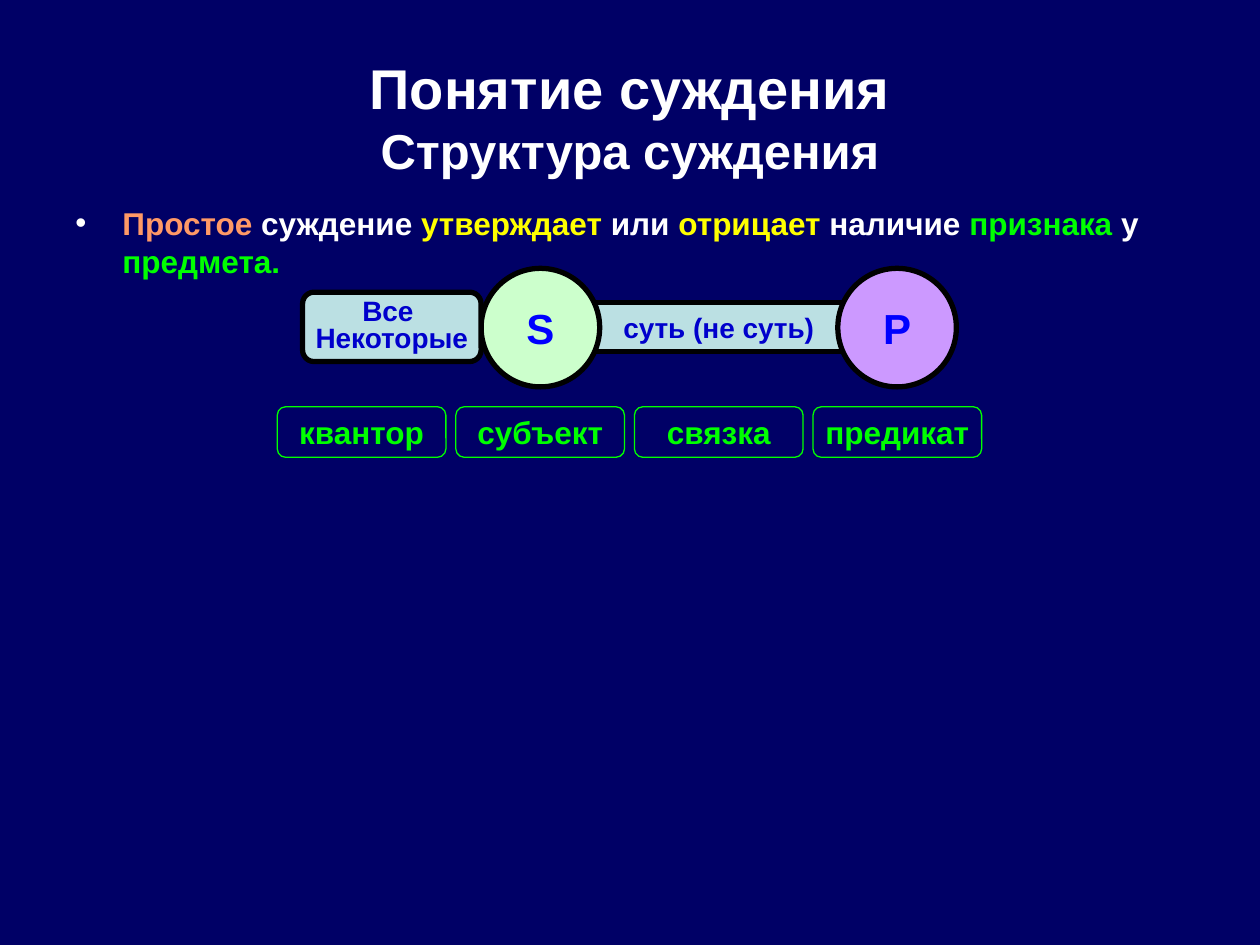
"""Build a slide on the structure of a simple judgement."""
from lxml import etree
from pptx import Presentation, util as u
from pptx.dml.color import RGBColor
from pptx.enum import shapes, text
from pptx.oxml.ns import qn

NAVY = RGBColor(0x00, 0x00, 0x66)
WHITE = RGBColor(0xFF, 0xFF, 0xFF)
BLACK = RGBColor(0x00, 0x00, 0x00)
ORANGE = RGBColor(0xFF, 0x99, 0x66)
YELLOW = RGBColor(0xFF, 0xFF, 0x00)
GREEN = RGBColor(0x00, 0xFF, 0x00)
PALE_BLUE = RGBColor(0xBB, 0xE0, 0xE3)
PALE_GREEN = RGBColor(0xCC, 0xFF, 0xCC)
VIOLET = RGBColor(0xCC, 0x99, 0xFF)
INK = RGBColor(0x00, 0x00, 0xCC)
BLUE = RGBColor(0x00, 0x00, 0xFF)

SHAPE = shapes.MSO_SHAPE
CENTER = text.PP_ALIGN.CENTER


def write(paragraph, words, size=18, color=WHITE):
    for index, line in enumerate(words.split("\n")):
        if index:
            paragraph.add_line_break()
        if line:
            run = paragraph.add_run()
            run.text = line
            run.font.name = "Arial"
            run.font.size = u.Pt(size)
            run.font.bold = True
            run.font.color.rgb = color


def add_bullet(paragraph, hanging):
    properties = paragraph._p.get_or_add_pPr()
    properties.set("marL", str(hanging))
    properties.set("indent", str(-hanging))
    bullet_color = etree.SubElement(properties, qn("a:buClr"))
    etree.SubElement(bullet_color, qn("a:srgbClr"), val=str(WHITE))
    etree.SubElement(properties, qn("a:buFont"), typeface="Arial")
    etree.SubElement(properties, qn("a:buChar"), char="•")


def add_text_area(slide, left, top, width, height):
    frame = slide.shapes.add_textbox(
        u.Cm(left), u.Cm(top), u.Cm(width), u.Cm(height)).text_frame
    frame.word_wrap = True
    frame.auto_size = text.MSO_AUTO_SIZE.NONE
    return frame


def add_title(slide):
    frame = add_text_area(slide, 1.27, 0.76, 22.86, 3.18)
    frame.vertical_anchor = text.MSO_ANCHOR.MIDDLE
    heading = frame.paragraphs[0]
    heading.alignment = CENTER
    write(heading, "Понятие суждения\n", size=32)
    write(heading, "Структура суждения", size=28)


def add_definition(slide):
    definition = add_text_area(slide, 1.27, 3.99, 22.86, 14.4).paragraphs[0]
    definition.space_before = u.Pt(3.6)
    add_bullet(definition, u.Cm(0.95))
    for words, color in (
        ("Простое", ORANGE), (" суждение ", WHITE),
        ("утверждает ", YELLOW), ("или ", WHITE),
        ("отрицает ", YELLOW), ("наличие ", WHITE),
        ("признака ", GREEN), ("у ", WHITE), ("предмета.", GREEN),
    ):
        write(definition, words, color=color)


def add_part(slide, preset, box, words, size=16, color=INK, fill=None,
             line=BLACK, line_width=3, margin=0.13, spacing=None):
    part = slide.shapes.add_shape(preset, *(u.Cm(length) for length in box))
    part.shadow.inherit = False
    if fill is None:
        part.fill.background()
    else:
        part.fill.solid()
        part.fill.fore_color.rgb = fill
    part.line.color.rgb = line
    part.line.width = u.Pt(line_width)
    frame = part.text_frame
    frame.word_wrap = False
    frame.vertical_anchor = text.MSO_ANCHOR.MIDDLE
    frame.margin_top = frame.margin_bottom = u.Cm(margin)
    caption = frame.paragraphs[0]
    caption.alignment = CENTER
    if spacing:
        caption.line_spacing = spacing
    write(caption, words, size=size, color=color)


def add_scheme(slide):
    add_part(slide, SHAPE.RECTANGLE, (11.99, 6.1, 5, 0.99),
             "суть (не суть)", fill=PALE_BLUE, margin=0)
    for left, letter, fill in ((9.7, "S", PALE_GREEN), (16.89, "P", VIOLET)):
        add_part(slide, SHAPE.OVAL, (left, 5.41, 2.39, 2.39), letter,
                 size=24, color=BLUE, fill=fill)
    add_part(slide, SHAPE.ROUNDED_RECTANGLE, (6.1, 5.89, 3.6, 1.4),
             "Все \nНекоторые", fill=PALE_BLUE, spacing=0.8)


def add_labels(slide):
    rounded = SHAPE.ROUNDED_RECTANGLE
    labels = (("квантор", rounded), ("субъект", rounded),
              ("связка", SHAPE.FLOWCHART_ALTERNATE_PROCESS),
              ("предикат", rounded))
    for column, (name, preset) in enumerate(labels):
        add_part(slide, preset, (5.59 + 3.6 * column, 8.2, 3.4, 1.02), name,
                 size=18, color=GREEN, line=GREEN, line_width=0.75)


def main():
    deck = Presentation()
    deck.slide_width, deck.slide_height = u.Cm(25.4), u.Cm(19.05)
    slide = deck.slides.add_slide(deck.slide_layouts[6])
    slide.background.fill.solid()
    slide.background.fill.fore_color.rgb = NAVY
    add_definition(slide)
    add_scheme(slide)
    add_labels(slide)
    add_title(slide)
    deck.save("out.pptx")


if __name__ == "__main__":
    main()
